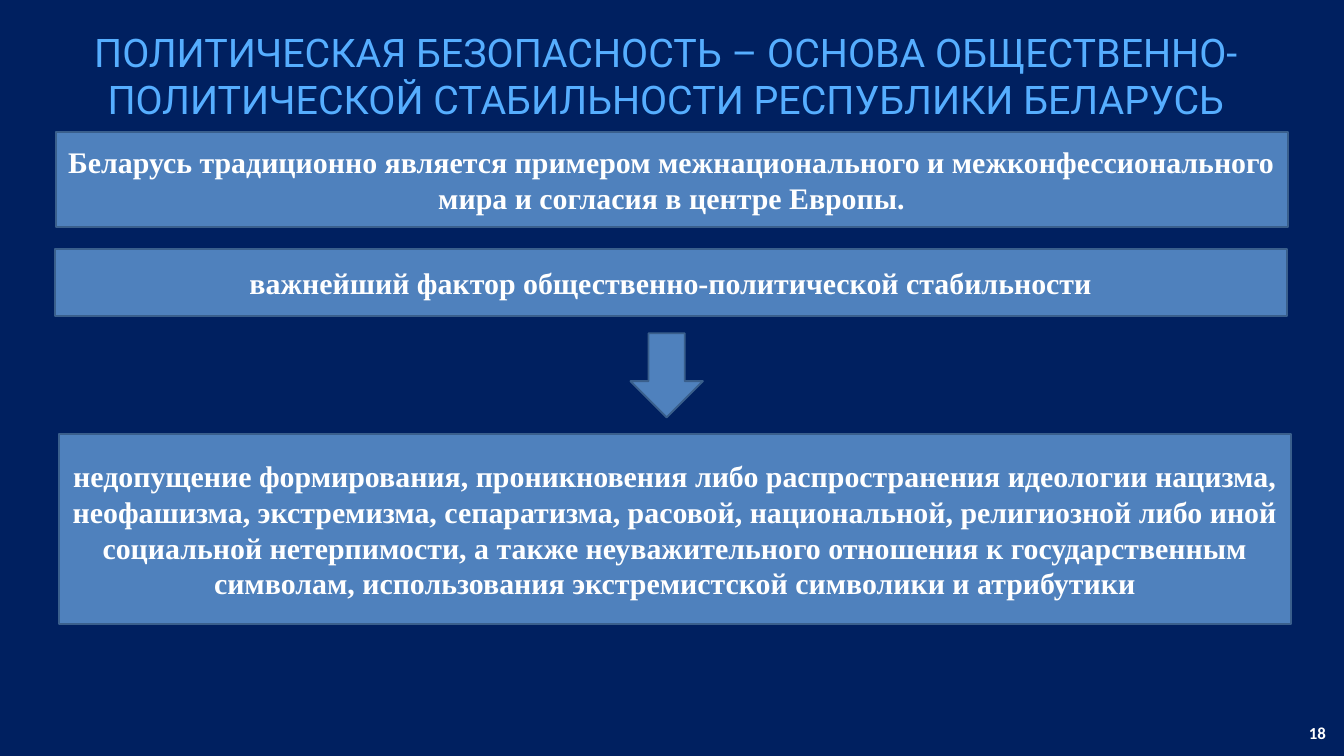
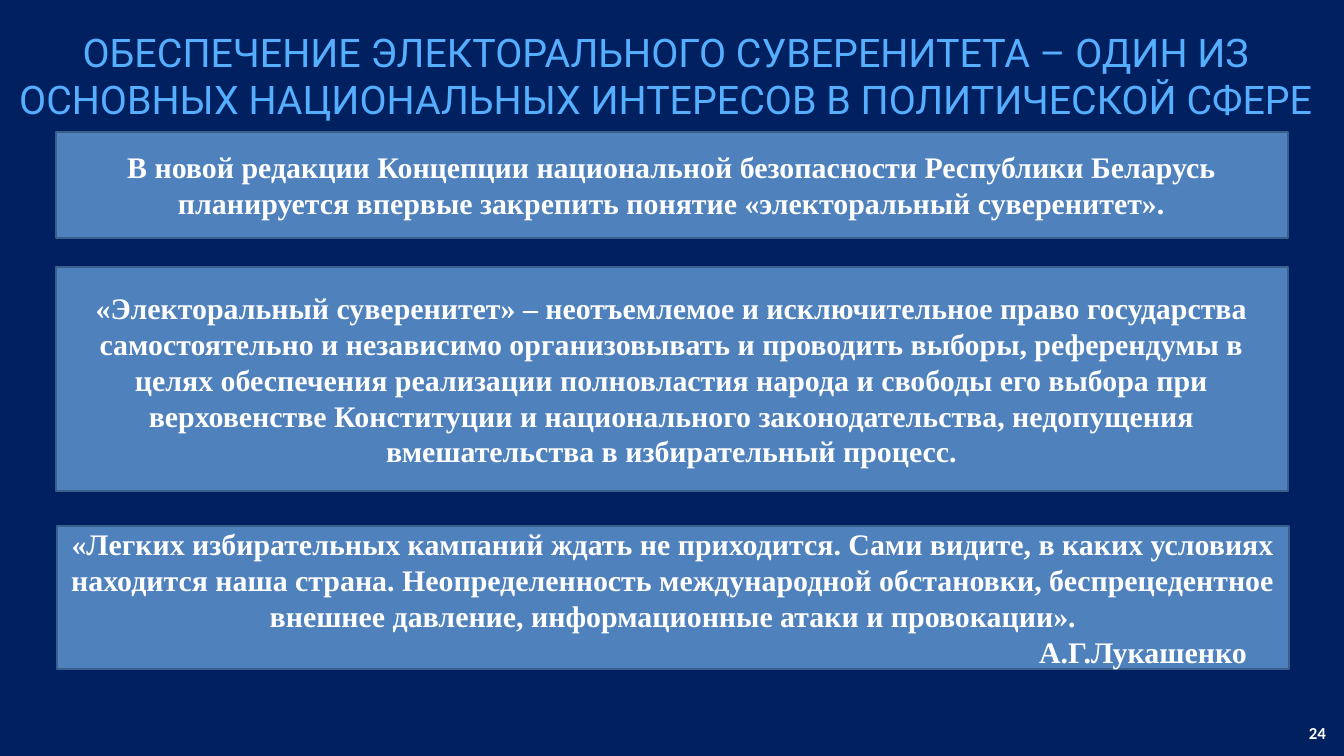
"""Builds two slides on political security and electoral sovereignty."""
from dataclasses import dataclass

import pptx
import pptx.dml.color
import pptx.enum.shapes
import pptx.enum.text
import pptx.util

Cm = pptx.util.Cm
Pt = pptx.util.Pt
RGBColor = pptx.dml.color.RGBColor
Shape = pptx.enum.shapes.MSO_SHAPE
Align = pptx.enum.text.PP_ALIGN
Anchor = pptx.enum.text.MSO_ANCHOR

NAVY = RGBColor(0x00, 0x20, 0x60)
SKY = RGBColor(0x56, 0xAE, 0xFF)
STEEL = RGBColor(0x4F, 0x81, 0xBD)
STEEL_EDGE = RGBColor(0x3A, 0x5F, 0x8C)
WHITE = RGBColor(0xFF, 0xFF, 0xFF)

TITLE_FONT = "Roboto"
BODY_FONT = "Times New Roman"
NUMBER_FONT = "Calibri"
STATEMENT_WIDTH = Cm(46.56)
SIGNATURE_INDENT = Cm(35.53)


@dataclass(frozen=True)
class Statement:
    """A filled box with one statement and an optional signature."""
    left: float
    top: float
    height: float
    text: str
    signature: str = ""


@dataclass(frozen=True)
class Arrow:
    """A block arrow pointing from one statement down to the next."""
    left: float
    top: float
    width: float
    height: float


@dataclass(frozen=True)
class Page:
    """The content of one slide."""
    number: int
    title: str
    statements: tuple[Statement, ...]
    arrows: tuple[Arrow, ...] = ()


PAGES = (
    Page(
        18,
        "ПОЛИТИЧЕСКАЯ БЕЗОПАСНОСТЬ – ОСНОВА ОБЩЕСТВЕННО-ПОЛИТИЧЕСКОЙ "
        "СТАБИЛЬНОСТИ РЕСПУБЛИКИ БЕЛАРУСЬ",
        (
            Statement(2.11, 4.98, 3.61,
                      "Беларусь традиционно является примером межнационального и "
                      "межконфессионального мира и согласия в центре Европы."),
            Statement(2.08, 9.42, 2.54,
                      "важнейший фактор общественно-политической стабильности"),
            Statement(2.24, 16.41, 7.19,
                      "недопущение формирования, проникновения либо распространения "
                      "идеологии нацизма, неофашизма, экстремизма, сепаратизма, расовой, "
                      "национальной, религиозной либо иной социальной нетерпимости, а "
                      "также неуважительного отношения к государственным символам, "
                      "использования экстремистской символики и атрибутики"),
        ),
        (Arrow(23.83, 12.6, 2.74, 3.18),),
    ),
    Page(
        24,
        "ОБЕСПЕЧЕНИЕ ЭЛЕКТОРАЛЬНОГО СУВЕРЕНИТЕТА – ОДИН ИЗ ОСНОВНЫХ "
        "НАЦИОНАЛЬНЫХ ИНТЕРЕСОВ В ПОЛИТИЧЕСКОЙ СФЕРЕ",
        (
            Statement(2.11, 4.98, 4.01,
                      "В новой редакции Концепции национальной безопасности Республики "
                      "Беларусь планируется впервые закрепить понятие «электоральный "
                      "суверенитет»."),
            Statement(2.11, 10.11, 8.46,
                      "«Электоральный суверенитет» – неотъемлемое и исключительное право "
                      "государства самостоятельно и независимо организовывать и проводить "
                      "выборы, референдумы в целях обеспечения реализации полновластия "
                      "народа и свободы его выбора при верховенстве Конституции и "
                      "национального законодательства, недопущения вмешательства в "
                      "избирательный процесс."),
            Statement(2.16, 19.89, 5.41,
                      "«Легких избирательных кампаний ждать не приходится. Сами видите, "
                      "в каких условиях находится наша страна. Неопределенность "
                      "международной обстановки, беспрецедентное внешнее давление, "
                      "информационные атаки и провокации».",
                      "А.Г.Лукашенко"),
        ),
    ),
)


def style_paragraph(paragraph, align: Align, font_name: str, size: float,
                    color: RGBColor, bold: bool) -> None:
    """Align a paragraph and format its runs."""
    paragraph.alignment = align
    for run in paragraph.runs:
        run.font.name = font_name
        run.font.size = Pt(size)
        run.font.bold = bold
        run.font.color.rgb = color


def place_title(slide, text: str) -> None:
    """Move, fill and format the title placeholder."""
    title = slide.shapes.title
    title.left, title.top, title.width, title.height = Cm(0), Cm(1.07), Cm(50.37), Cm(3.61)
    frame = title.text_frame
    frame.text = text
    frame.word_wrap = True
    frame.auto_size = pptx.enum.text.MSO_AUTO_SIZE.NONE
    frame.vertical_anchor = Anchor.TOP
    frame.margin_left = frame.margin_right = frame.margin_top = frame.margin_bottom = 0
    heading = frame.paragraphs[0]
    heading.line_spacing = Pt(50.6)
    style_paragraph(heading, Align.CENTER, TITLE_FONT, 42.2, SKY, False)


def add_number(slide, number: int) -> None:
    """Write the slide number in the bottom right corner."""
    frame = slide.shapes.add_textbox(Cm(44.45), Cm(27.2), Cm(5.92), Cm(1.02)).text_frame
    frame.text = str(number)
    frame.word_wrap = True
    frame.vertical_anchor = Anchor.MIDDLE
    style_paragraph(frame.paragraphs[0], Align.RIGHT, NUMBER_FONT, 18, WHITE, True)


def add_block(slide, kind: Shape, left: int, top: int, width: int, height: int):
    """Add a preset shape in the common fill and outline."""
    block = slide.shapes.add_shape(kind, left, top, width, height)
    block.shadow.inherit = False
    block.fill.solid()
    block.fill.fore_color.rgb = STEEL
    block.line.color.rgb = STEEL_EDGE
    block.line.width = Pt(2)
    return block


def add_statement(slide, statement: Statement) -> None:
    """Add a statement box with its text and signature."""
    box = add_block(slide, Shape.RECTANGLE, Cm(statement.left), Cm(statement.top),
                    STATEMENT_WIDTH, Cm(statement.height))
    frame = box.text_frame
    frame.word_wrap = True
    frame.vertical_anchor = Anchor.MIDDLE
    frame.text = statement.text
    if statement.signature:
        signature = frame.add_paragraph()
        signature.text = statement.signature
        signature._p.get_or_add_pPr().set("marL", str(SIGNATURE_INDENT))
    for paragraph in frame.paragraphs:
        style_paragraph(paragraph, Align.CENTER, BODY_FONT, 32, WHITE, True)


def add_arrow(slide, arrow: Arrow) -> None:
    """Add a block arrow pointing down."""
    add_block(slide, Shape.DOWN_ARROW, Cm(arrow.left), Cm(arrow.top),
              Cm(arrow.width), Cm(arrow.height))


def build_page(deck, page: Page) -> None:
    """Add one slide with all of its content."""
    slide = deck.slides.add_slide(deck.slide_layouts.get_by_name("Title Only"))
    place_title(slide, page.title)
    add_number(slide, page.number)
    for statement in page.statements:
        add_statement(slide, statement)
    for arrow in page.arrows:
        add_arrow(slide, arrow)


def main() -> None:
    """Build and save the presentation."""
    deck = pptx.Presentation()
    deck.slide_width, deck.slide_height = Cm(50.8), Cm(28.58)
    backdrop = deck.slide_master.background.fill
    backdrop.solid()
    backdrop.fore_color.rgb = NAVY
    for page in PAGES:
        build_page(deck, page)
    deck.save("out.pptx")


if __name__ == "__main__":
    main()
